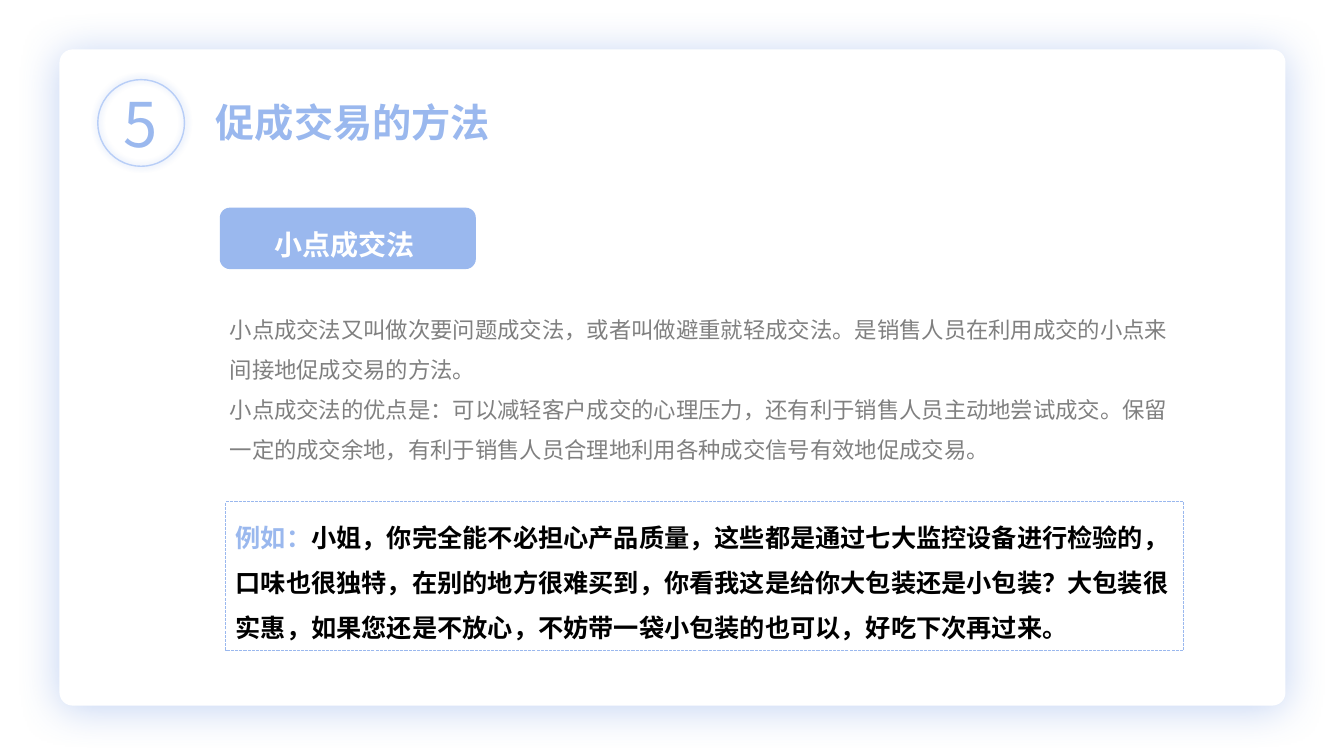
from lxml.etree import SubElement
from pptx import Presentation
from pptx.dml.color import RGBColor
from pptx.enum.dml import MSO_LINE
from pptx.enum.shapes import MSO_SHAPE
from pptx.enum.text import MSO_ANCHOR, PP_ALIGN
from pptx.oxml.ns import qn
from pptx.util import Inches, Pt

FONT = "Noto Sans CJK SC"
BLUE = RGBColor(0x9A, 0xB8, 0xEE)
RING = RGBColor(0xB8, 0xCE, 0xF7)
GRAY = RGBColor(0x80, 0x80, 0x80)
WHITE = RGBColor(0xFF, 0xFF, 0xFF)
BLACK = RGBColor(0, 0, 0)
CARD_GLOW = RGBColor(0x68, 0x91, 0xE1)
RING_GLOW = RGBColor(0x3F, 0x78, 0xE2)

NUMBER = "5"
TITLE = "促成交易的方法"
METHOD = "小点成交法 "
BODY = [
    "小点成交法又叫做次要问题成交法，或者叫做避重就轻成交法。是销售人员在利用成交的小点来间接地促成交易的方法。",
    "小点成交法的优点是：可以减轻客户成交的心理压力，还有利于销售人员主动地尝试成交。保留一定的成交余地，有利于销售人员合理地利用各种成交信号有效地促成交易。",
]
EXAMPLE = [
    ("例如：", BLUE),
    ("小姐，你完全能不必担心产品质量，这些都是通过七大监控设备进行检验的，口味也很独特，在别的地方很难买到，你看我这是给你大包装还是小包装？大包装很实惠，如果您还是不放心，不妨带一袋小包装的也可以，好吃下次再过来。", BLACK),
]


def box(*sides):
    return [Inches(v) for v in sides]


def add_shape(s, kind, sides, fill=None, line=None, width=1):
    sp = s.shapes.add_shape(kind, *box(*sides))
    sp.shadow.inherit = False
    if fill is None:
        sp.fill.background()
    else:
        sp.fill.solid()
        sp.fill.fore_color.rgb = fill
    if line is None:
        sp.line.fill.background()
    else:
        sp.line.color.rgb = line
        sp.line.width = Pt(width)
    return sp


def add_shadow(sp, color, blur, dist, angle):
    effects = sp.element.spPr.find(qn("a:effectLst"))
    shadow = SubElement(effects, qn("a:outerShdw"), blurRad=str(Pt(blur)),
                        dist=str(Pt(dist)), dir=str(angle * 60000),
                        algn="ctr", rotWithShape="0")
    tint = SubElement(shadow, qn("a:srgbClr"), val=str(color))
    SubElement(tint, qn("a:alpha"), val="40000")


def write(sp, paragraphs, size, bold=False, align=PP_ALIGN.LEFT, spacing=1.0):
    tf = sp.text_frame
    tf.word_wrap = True
    tf.vertical_anchor = MSO_ANCHOR.TOP
    tf.margin_left = tf.margin_right = Inches(0.1)
    tf.margin_top = tf.margin_bottom = Inches(0.05)
    for i, runs in enumerate(paragraphs):
        p = tf.add_paragraph() if i else tf.paragraphs[0]
        p.alignment = align
        p.line_spacing = spacing
        for text, color in runs:
            r = p.add_run()
            r.text = text
            r.font.size = Pt(size)
            r.font.bold = bold
            r.font.name = FONT
            r.font.color.rgb = color
            SubElement(r.font._element, qn("a:ea"), typeface=FONT)


def add_text(s, sides, paragraphs, size, **style):
    write(s.shapes.add_textbox(*box(*sides)), paragraphs, size, **style)


def main():
    prs = Presentation()
    prs.slide_width, prs.slide_height = Inches(13.33), Inches(7.5)
    s = prs.slides.add_slide(prs.slide_layouts[5])

    title = s.shapes.title
    title.left, title.top, title.width, title.height = box(2.04, 0.93, 4.47, 0.57)
    write(title, [[(TITLE, BLUE)]], 28, bold=True)

    card = add_shape(s, MSO_SHAPE.ROUNDED_RECTANGLE, (0.59, 0.49, 12.16, 6.51), WHITE)
    card.adjustments[0] = 0.02
    add_shadow(card, CARD_GLOW, 30, 3, 90)
    title.element.addprevious(card.element)

    ring = add_shape(s, MSO_SHAPE.OVAL, (0.97, 0.79, 0.86, 0.86), line=RING)
    add_shadow(ring, RING_GLOW, 5, 0, 0)
    add_text(s, (1.05, 0.8, 0.68, 0.84), [[(NUMBER, BLUE)]], 44, align=PP_ALIGN.CENTER)

    add_shape(s, MSO_SHAPE.ROUNDED_RECTANGLE, (2.18, 2.06, 2.54, 0.61), BLUE)
    add_text(s, (2.18, 2.04, 2.54, 0.55), [[(METHOD, WHITE)]], 20,
             bold=True, align=PP_ALIGN.CENTER, spacing=1.5)

    add_text(s, (2.18, 2.95, 9.62, 1.72), [[(text, GRAY)] for text in BODY], 16, spacing=1.5)

    example = add_shape(s, MSO_SHAPE.RECTANGLE, (2.24, 4.98, 9.5, 1.47), line=BLUE, width=0.75)
    example.line.dash_style = MSO_LINE.SQUARE_DOT
    write(example, [EXAMPLE], 18, bold=True, spacing=1.5)

    prs.save("out.pptx")


if __name__ == "__main__":
    main()
